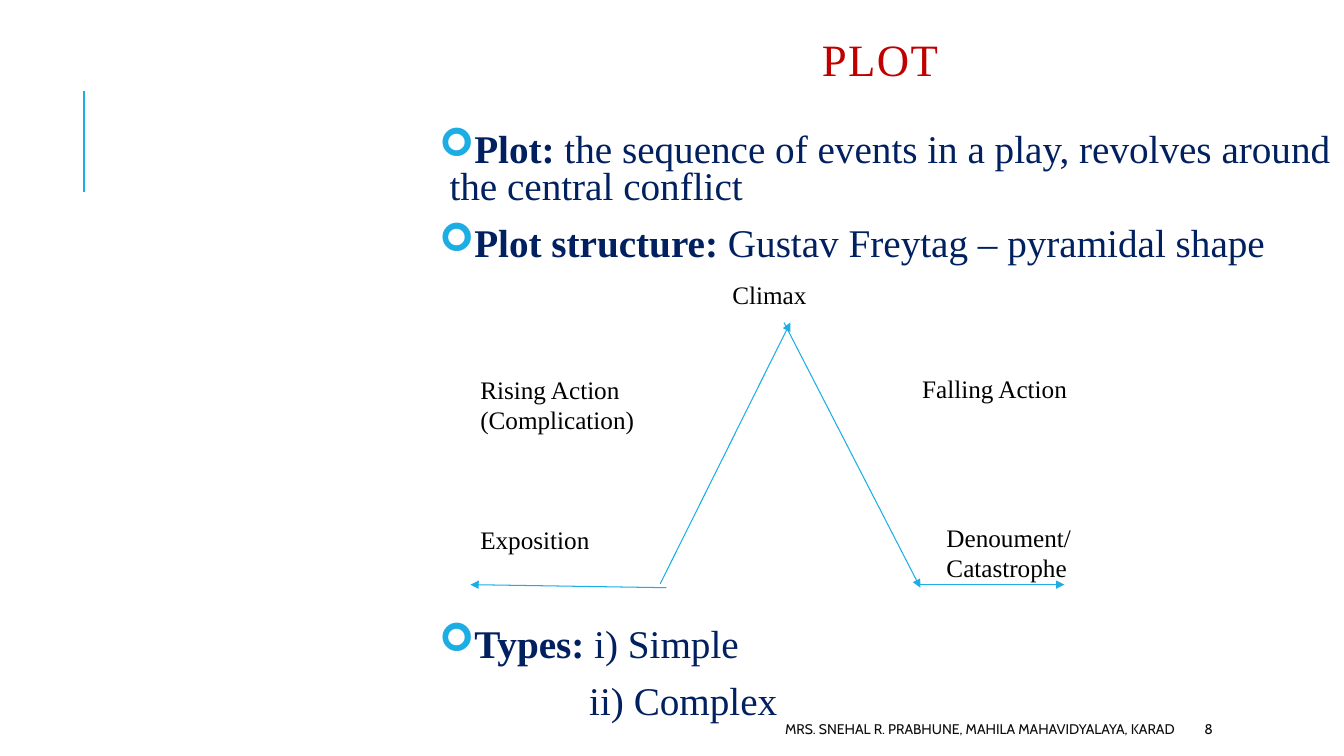
import pptx
import pptx.dml.color
import pptx.enum.shapes
import pptx.enum.text
import pptx.oxml.ns
import pptx.util
from lxml import etree

Pt = pptx.util.Pt
RGBColor = pptx.dml.color.RGBColor
ALIGN = pptx.enum.text.PP_ALIGN
ANCHOR = pptx.enum.text.MSO_ANCHOR
qn = pptx.oxml.ns.qn

SKY = RGBColor(0x1C, 0xAD, 0xE4)
NAVY = RGBColor(0x00, 0x20, 0x60)
RED = RGBColor(0xC0, 0x00, 0x00)
BLACK = RGBColor(0x00, 0x00, 0x00)
CHARCOAL = RGBColor(0x0D, 0x0D, 0x0D)
SERIF = "Times New Roman"
SANS = "Cabin"

TITLE = "PLOT"
# Each paragraph: bold lead, plain text
DEFINITIONS = [
    ("Plot: ", "the sequence of events in a play, revolves around the central conflict"),
    ("Plot structure:", " Gustav Freytag – pyramidal shape"),
]
TYPES = [("Types: ", "i) Simple"), ("", "ii) Complex")]
# Pyramid labels: lines, (left, top, width, height)
LABELS = [
    (["Exposition"], (336, 370.8, 130, 29)),
    (["Rising Action", "(Complication)"], (336, 263.5, 180, 51)),
    (["Climax"], (516, 195.8, 119, 29)),
    (["Falling Action"], (651.6, 262.8, 193, 29)),
    (["Denoument/ Catastrophe"], (669, 369.4, 113, 51)),
]
# Pyramid arrows: start, end
ARROWS = [
    ((476, 419.8), (336, 417.6)),
    ((471.6, 417), (564.5, 230.4)),
    ((560, 230.4), (657.4, 419.8)),
    ((657.4, 417.6), (760.3, 417.6)),
]
FOOTER = ("MRS. SNEHAL R. PRABHUNE, MAHILA MAHAVIDYALAYA, KARAD", "8")

BODY_LEFT, BODY_WIDTH = 310.3, 649.7
BULLET_INDENT = 7.2
SUBITEM_INDENT = 107


def add_run(paragraph, text, size, color, font=SERIF, bold=False):
    run = paragraph.add_run()
    run.text = text
    run.font.size = Pt(size)
    run.font.name = font
    run.font.bold = bold
    run.font.color.rgb = color
    return run


def add_text_frame(slide, box, inset=None):
    frame = slide.shapes.add_textbox(*map(Pt, box)).text_frame
    frame.word_wrap = True
    if inset is not None:
        frame.margin_left = frame.margin_right = Pt(inset)
        frame.margin_top = frame.margin_bottom = Pt(inset)
    return frame


def next_paragraph(frame, index):
    return frame.add_paragraph() if index else frame.paragraphs[0]


def add_bullet(paragraph):
    properties = paragraph._p.get_or_add_pPr()
    properties.set("marL", str(Pt(BULLET_INDENT)))
    properties.set("indent", str(-Pt(BULLET_INDENT)))
    color = etree.SubElement(properties, qn("a:buClr"))
    etree.SubElement(color, qn("a:srgbClr"), val=str(SKY))
    etree.SubElement(properties, qn("a:buFont"), typeface="Wingdings")
    etree.SubElement(properties, qn("a:buChar"), char="➢")


def add_body(slide, top, height, items):
    """Add bulleted items; an item without a bold lead is an indented sub-item."""
    frame = add_text_frame(slide, (BODY_LEFT, top, BODY_WIDTH, height), inset=3.6)
    for index, (lead, text) in enumerate(items):
        paragraph = next_paragraph(frame, index)
        paragraph.line_spacing = 0.8
        paragraph.space_before = Pt(12)
        paragraph.space_after = Pt(2)
        if lead:
            add_bullet(paragraph)
            add_run(paragraph, lead, 28, NAVY, bold=True)
        else:
            paragraph._p.get_or_add_pPr().set("marL", str(Pt(SUBITEM_INDENT)))
        add_run(paragraph, text, 28, NAVY)


def add_line(slide, start, end, width, arrow=False):
    line = slide.shapes.add_connector(
        pptx.enum.shapes.MSO_CONNECTOR.STRAIGHT, *map(Pt, start + end))
    line.line.color.rgb = SKY
    line.line.width = Pt(width)
    if arrow:
        etree.SubElement(line.line._get_or_add_ln(), qn("a:tailEnd"), type="triangle")
    etree.SubElement(line._element.spPr, qn("a:effectLst"))


def add_title(slide):
    title = slide.shapes.title
    title.left, title.top, title.width, title.height = map(Pt, (310.3, 0.7, 636.5, 90))
    frame = title.text_frame
    frame.auto_size = pptx.enum.text.MSO_AUTO_SIZE.NONE
    frame.vertical_anchor = ANCHOR.MIDDLE
    paragraph = frame.paragraphs[0]
    paragraph.alignment = ALIGN.CENTER
    paragraph.line_spacing = 0.8
    run = add_run(paragraph, TITLE, 32, RED)
    run.font._element.set("spc", "100")


def add_footer(slide):
    boxes = ((381.6, 509.8, 464.4, 21.6), (853.2, 509.8, 76.3, 21.6))
    for text, box, alignment in zip(FOOTER, boxes, (ALIGN.RIGHT, ALIGN.LEFT)):
        frame = add_text_frame(slide, box)
        frame.vertical_anchor = ANCHOR.MIDDLE
        frame.paragraphs[0].alignment = alignment
        add_run(frame.paragraphs[0], text, 10, CHARCOAL, SANS)


def main():
    presentation = pptx.Presentation()
    presentation.slide_width, presentation.slide_height = Pt(960), Pt(540)
    slide = presentation.slides.add_slide(presentation.slide_layouts[5])

    add_line(slide, (60, 136.8), (60, 64.8), 1.5)
    add_title(slide)
    add_body(slide, 91.4, 104, DEFINITIONS)
    add_body(slide, 445, 84, TYPES)
    add_footer(slide)
    for start, end in ARROWS:
        add_line(slide, start, end, 0.75, arrow=True)
    for lines, box in LABELS:
        frame = add_text_frame(slide, box)
        for index, text in enumerate(lines):
            add_run(next_paragraph(frame, index), text, 18, BLACK)

    presentation.save("out.pptx")


if __name__ == "__main__":
    main()
